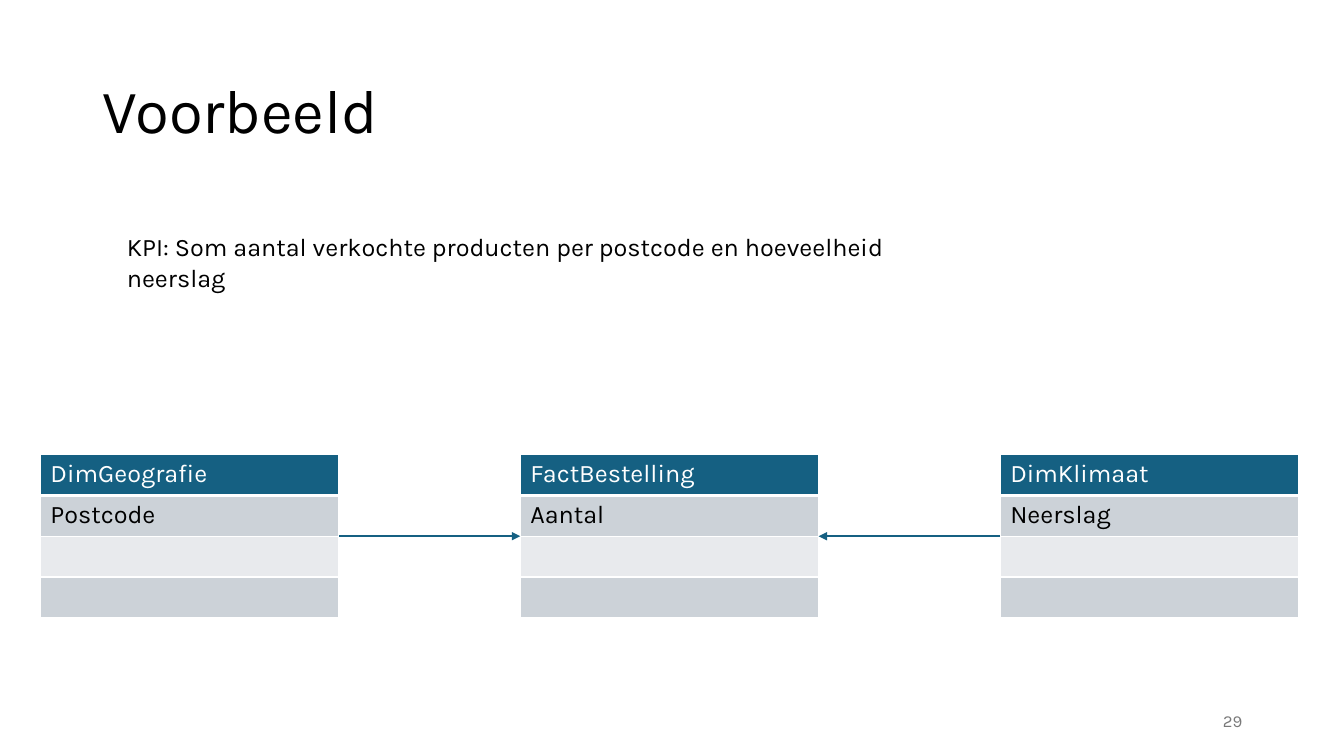
from lxml import etree
from pptx import Presentation
from pptx.dml.color import RGBColor
from pptx.enum.shapes import MSO_CONNECTOR
from pptx.enum.text import MSO_ANCHOR, PP_ALIGN
from pptx.oxml.ns import qn
from pptx.util import Inches, Pt

LEFT, RIGHT = PP_ALIGN.LEFT, PP_ALIGN.RIGHT
TOP, MIDDLE = MSO_ANCHOR.TOP, MSO_ANCHOR.MIDDLE
STRAIGHT = MSO_CONNECTOR.STRAIGHT

FONT = "Karla"
BLUE, WHITE, BLACK, GREY = "156082", "FFFFFF", "000000", "797979"
FILLS = [BLUE, "CCD2D8", "E8EAED", "CCD2D8"]

# Grid of the three tables, in inches
START, STEP, WIDTH = 0.4, 4.76, 2.96
HEAD, ROW = 4.51, 0.405
TABLES = [
    ("DimGeografie", "Postcode"),
    ("FactBestelling", "Aantal"),
    ("DimKlimaat", "Neerslag"),
]


def color(code):
    return RGBColor.from_string(code)


def column(index):
    """Left edge of a table on the grid."""
    return START + index * STEP


def write(frame, text, size=18, ink=BLACK, align=LEFT, spacing=None):
    par = frame.paragraphs[0]
    par.alignment = align
    par.line_spacing = spacing
    run = par.add_run()
    run.text = text
    run.font.name = FONT
    run.font.size = Pt(size)
    run.font.color.rgb = color(ink)


def add_text(slide, box, text, anchor=TOP, **style):
    shape = slide.shapes.add_textbox(*map(Inches, box))
    frame = shape.text_frame
    frame.word_wrap = True
    frame.vertical_anchor = anchor
    write(frame, text, **style)


def add_border(cell, side, width):
    props = cell._tc.get_or_add_tcPr()
    line = etree.SubElement(props, qn("a:ln" + side), w=str(Pt(width)))
    fill = etree.SubElement(line, qn("a:solidFill"))
    etree.SubElement(fill, qn("a:srgbClr"), val=WHITE)


def add_entity(slide, index, names):
    """Table with a header, one named field and two empty rows."""
    count = len(FILLS)
    box = map(Inches, (column(index), HEAD, WIDTH, ROW * count))
    table = slide.shapes.add_table(count, 1, *box).table
    for row, fill in enumerate(FILLS):
        cell = table.cell(row, 0)
        for side in "LRTB":
            add_border(cell, side, 3 if row == 0 and side == "B" else 1)
        cell.fill.solid()
        cell.fill.fore_color.rgb = color(fill)
        if row < len(names):
            write(cell.text_frame, names[row], ink=BLACK if row else WHITE)


def add_arrow(slide, start, end):
    """Level arrow through the middle of the tables."""
    level = HEAD + ROW * len(FILLS) / 2
    ends = map(Inches, (start, level, end, level))
    arrow = slide.shapes.add_connector(STRAIGHT, *ends)
    arrow.line.color.rgb = color(BLUE)
    arrow.line.width = Pt(1.5)
    line = arrow.line._get_or_add_ln()
    etree.SubElement(line, qn("a:tailEnd"), type="triangle")
    etree.SubElement(arrow._element.spPr, qn("a:effectLst"))


def main():
    deck = Presentation()
    deck.slide_width, deck.slide_height = Inches(13.33), Inches(7.5)
    slide = deck.slides.add_slide(deck.slide_layouts[6])

    add_text(slide, (0.92, 0.4, 11.5, 1.45), "Voorbeeld",
             anchor=MIDDLE, size=44, spacing=0.9)
    add_text(slide, (1.16, 2.25, 7.95, 0.4),
             "KPI: Som aantal verkochte producten per postcode "
             "en hoeveelheid neerslag")
    for index, names in enumerate(TABLES):
        add_entity(slide, index, names)
    add_arrow(slide, column(0) + WIDTH, column(1))
    add_arrow(slide, column(2), column(1) + WIDTH)
    add_text(slide, (9.42, 6.95, 3, 0.4), "29",
             anchor=MIDDLE, size=12, ink=GREY, align=RIGHT)

    deck.save("out.pptx")


if __name__ == "__main__":
    main()
